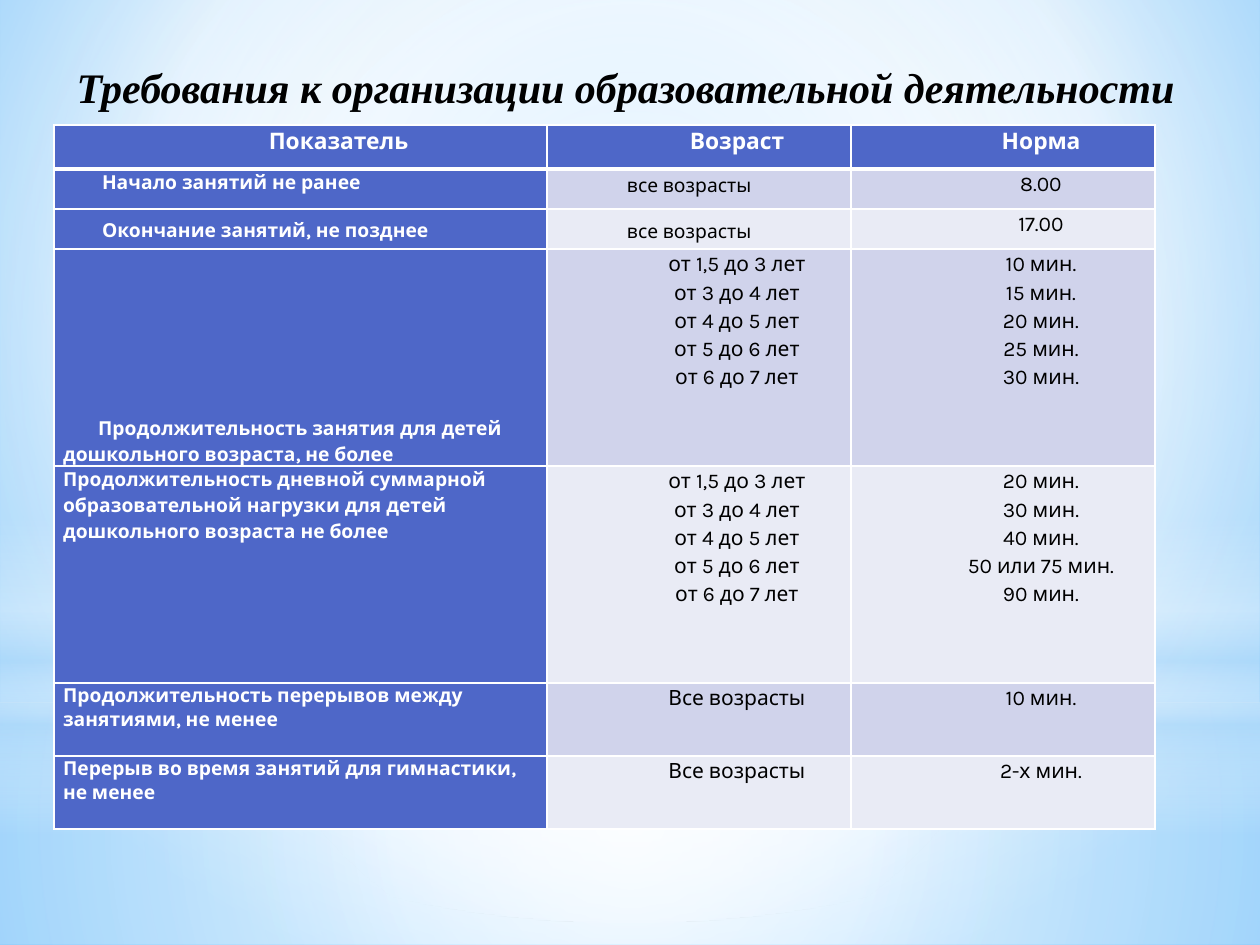
from lxml import etree
from pptx import Presentation
from pptx.dml.color import RGBColor
from pptx.enum.shapes import MSO_SHAPE
from pptx.enum.text import MSO_ANCHOR, MSO_AUTO_SIZE, PP_ALIGN
from pptx.oxml.ns import qn
from pptx.util import Pt

PX = 914400 // 126
RECT, OVAL = MSO_SHAPE.RECTANGLE, MSO_SHAPE.OVAL
TOP, MIDDLE, BOTTOM = MSO_ANCHOR.TOP, MSO_ANCHOR.MIDDLE, MSO_ANCHOR.BOTTOM
LEFT, CENTER = PP_ALIGN.LEFT, PP_ALIGN.CENTER
C = {
    "black": "000000", "white": "FFFFFF", "head": "4E67C8",
    "band": "D0D3EB", "light": "E9EBF5", "sky": "B4DCFA",
    "bg_in": "9ED5FF", "bg_out": "5BB9FF",
}
COLS = [493, 304, 304]
ROWS = [44, 40, 40, 217, 217, 73, 73]
AGES = "от 1,5 до 3 лет\nот 3 до 4 лет\nот 4 до 5 лет\nот 5 до 6 лет\nот 6 до 7 лет"
HEADER = ["Показатель", "Возраст", "Норма"]
NAME = dict(size=11, color="white", bold=True)
VALUE = dict(size=12, align=CENTER, margin=14, indent=62)
ALL_AGES = dict(size=11, margin=71, spacing=1.27)
BODY = [
    [("Начало занятий не ранее", dict(NAME, margin=4, indent=35)),
     ("все возрасты", ALL_AGES), ("8.00", VALUE)],
    [("Окончание занятий, не позднее", dict(NAME, margin=4, indent=35, anchor=MIDDLE)),
     ("все возрасты", dict(ALL_AGES, anchor=MIDDLE)), ("17.00", VALUE)],
    [("Продолжительность занятия для детей дошкольного возраста, не более",
      dict(NAME, indent=35, anchor=BOTTOM)),
     (AGES, VALUE), ("10 мин.\n15 мин.\n20 мин.\n25 мин.\n30 мин.", VALUE)],
    [("Продолжительность дневной суммарной образовательной нагрузки для детей "
      "дошкольного возраста не более", NAME),
     (AGES, VALUE), ("20 мин.\n30 мин.\n40 мин.\n50 или 75 мин.\n90 мин.", VALUE)],
    [("Продолжительность перерывов между занятиями, не менее", dict(NAME, spacing=1.07)),
     ("Все возрасты", VALUE), ("10 мин.", VALUE)],
    [("Перерыв во время занятий для гимнастики, не менее", dict(NAME, spacing=1.07)),
     ("Все возрасты", VALUE), ("2-х мин.", VALUE)],
]


def put_text(tf, text, size=12, color="black", bold=False, italic=False, font="Karla",
             align=LEFT, margin=0, indent=0, spacing=1.15, anchor=TOP):
    tf.word_wrap = True
    tf.vertical_anchor = anchor
    for i, line in enumerate(text.split("\n")):
        p = tf.add_paragraph() if i else tf.paragraphs[0]
        p.alignment = align
        p.line_spacing = spacing
        pPr = p._p.get_or_add_pPr()
        pPr.set("marL", str(margin * PX))
        pPr.set("indent", str(indent * PX))
        r = p.add_run()
        r.text = line
        r.font.name, r.font.size = font, Pt(size)
        r.font.bold, r.font.italic = bold, italic
        r.font.color.rgb = RGBColor.from_string(C[color])


def set_gradient(fill, owner, stops, focus=None):
    fill.gradient()
    grad = owner.find(".//" + qn("a:gradFill"))
    for child in list(grad):
        grad.remove(child)
    gs_list = etree.SubElement(grad, qn("a:gsLst"))
    for pos, color, alpha in stops:
        gs = etree.SubElement(gs_list, qn("a:gs"), pos=str(pos * 1000))
        clr = etree.SubElement(gs, qn("a:srgbClr"), val=C[color])
        if alpha < 100:
            etree.SubElement(clr, qn("a:alpha"), val=str(alpha * 1000))
    if focus:
        radial = etree.SubElement(grad, qn("a:path"), {"path": "circle"})
        edges = {k: str(v * 1000) for k, v in zip("ltrb", focus)}
        etree.SubElement(radial, qn("a:fillToRect"), edges)
    else:
        etree.SubElement(grad, qn("a:lin"), ang="5400000", scaled="0")


def add_glow(s, kind, box, stops, focus=(50, 50, 50, 50)):
    sp = s.shapes.add_shape(kind, *[v * PX for v in box])
    sp.shadow.inherit = False
    sp.line.fill.background()
    set_gradient(sp.fill, sp._element, stops, focus)


def add_backdrop(s, x, y, w, h):
    set_gradient(s.background.fill, s._element,
                 [(0, "bg_in", 100), (60, "white", 100), (100, "bg_out", 100)],
                 (20, 10, 20, 60))
    horizon = 703
    add_glow(s, RECT, (x, y + horizon, w, h - horizon),
             [(0, "white", 91), (37, "white", 76), (100, "sky", 79)])
    add_glow(s, RECT, (x, y, w, horizon),
             [(0, "white", 89), (48, "white", 62), (100, "sky", 79)])
    add_glow(s, RECT, (x, y + 519, w, 315),
             [(0, "white", 0), (29, "white", 30), (45, "sky", 40),
              (55, "white", 26), (65, "sky", 60), (100, "white", 0)], None)
    add_glow(s, OVAL, (x, y + 220, w, horizon), [(0, "white", 100), (56, "white", 0)])


def add_title(s, x, y, w, h):
    sp = s.shapes.title
    s.shapes._spTree.append(sp._element)
    sp.left, sp.top, sp.width, sp.height = [v * PX for v in (x, y, w, h)]
    tf = sp.text_frame
    tf.auto_size = MSO_AUTO_SIZE.NONE
    tf.margin_top = 60 * PX
    put_text(tf, "Требования к организации образовательной деятельности", size=24,
             bold=True, italic=True, font="Times New Roman", align=CENTER, spacing=1.0)


def set_borders(cell, bottom):
    tcPr = cell._tc.get_or_add_tcPr()
    for i, (side, width) in enumerate(zip("LRTB", (1, 1, 1, bottom))):
        ln = etree.Element(qn("a:ln" + side), w=str(Pt(width)))
        solid = etree.SubElement(ln, qn("a:solidFill"))
        etree.SubElement(solid, qn("a:srgbClr"), val=C["white"])
        tcPr.insert(i, ln)


def add_norms_table(s, x, y):
    frame = s.shapes.add_table(len(ROWS), len(COLS), x * PX, y * PX,
                               sum(COLS) * PX, sum(ROWS) * PX)
    table = frame.table
    for column, w in zip(table.columns, COLS):
        column.width = w * PX
    for row, h in zip(table.rows, ROWS):
        row.height = h * PX
    head_format = dict(VALUE, size=13, color="white", bold=True)
    rows = [[(name, head_format) for name in HEADER]] + BODY
    for i, row in enumerate(rows):
        for j, (text, fmt) in enumerate(row):
            cell = table.cell(i, j)
            cell.margin_left = cell.margin_right = 9 * PX
            cell.margin_top = cell.margin_bottom = 0
            cell.vertical_anchor = fmt.get("anchor", TOP)
            cell_format = {k: v for k, v in fmt.items() if k != "anchor"}
            put_text(cell.text_frame, text, **cell_format)
            fill = "head" if i == 0 or j == 0 else "band" if i % 2 else "light"
            cell.fill.solid()
            cell.fill.fore_color.rgb = RGBColor.from_string(C[fill])
            set_borders(cell, 1 if i else 3)


def main():
    prs = Presentation()
    prs.slide_width, prs.slide_height = 1260 * PX, 945 * PX
    s = prs.slides.add_slide(prs.slide_layouts[5])
    add_backdrop(s, 0, 0, 1260, 945)
    add_title(s, 25, 1, 1201, 403)
    add_norms_table(s, 54, 125)
    prs.save("out.pptx")


if __name__ == "__main__":
    main()
